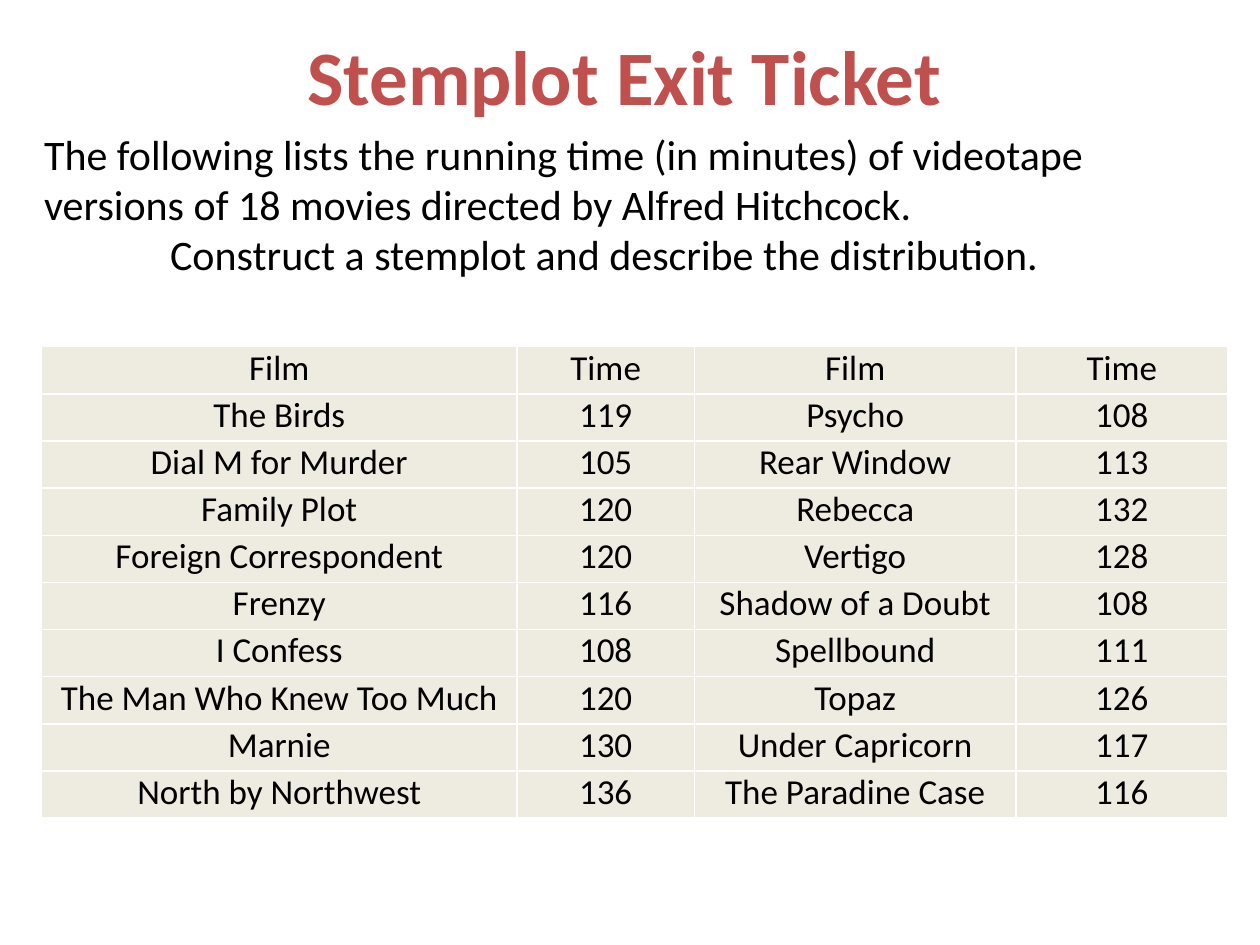
from lxml.etree import SubElement
from pptx import Presentation
from pptx.dml.color import RGBColor
from pptx.enum.text import MSO_ANCHOR, PP_ALIGN
from pptx.oxml.ns import qn
from pptx.util import Cm, Pt

RED = RGBColor(0xC0, 0x50, 0x4D)
BLACK = RGBColor(0, 0, 0)
WHITE = RGBColor(0xFF, 0xFF, 0xFF)
CREAM = RGBColor(0xEE, 0xEC, 0xE1)

TITLE_FONT = {"name": "Calibri", "size": Pt(44), "bold": True}
BODY_FONT = {"name": "Calibri", "size": Pt(24), "bold": False}
CELL_FONT = {"name": "Calibri", "size": Pt(20), "bold": False}
CELL_FORMAT = {"margin_left": Cm(0.18), "margin_right": Cm(0.18),
               "margin_top": 0, "margin_bottom": 0,
               "vertical_anchor": MSO_ANCHOR.TOP}

INTRO = ("The following lists the running time (in minutes) of videotape "
         "versions of 18 movies directed by Alfred Hitchcock.")
TASK = "Construct a stemplot and describe the distribution."

COLUMN_WIDTHS = [9.58, 3.58, 6.48, 4.27]
ROW_HEIGHT = 0.95
FILMS = [
    ("Film", "Time", "Film", "Time"),
    ("The Birds", "119", "Psycho", "108"),
    ("Dial M for Murder", "105", "Rear Window", "113"),
    ("Family Plot", "120", "Rebecca", "132"),
    ("Foreign Correspondent", "120", "Vertigo", "128"),
    ("Frenzy", "116", "Shadow of a Doubt", "108"),
    ("I Confess", "108", "Spellbound", "111"),
    ("The Man Who Knew Too Much", "120", "Topaz", "126"),
    ("Marnie", "130", "Under Capricorn", "117"),
    ("North by Northwest", "136", "The Paradine Case", "116"),
]


def set_attributes(target, values):
    for name, value in values.items():
        setattr(target, name, value)


def write_paragraph(p, text, font, color, align=PP_ALIGN.LEFT):
    p.alignment = align
    r = p.add_run()
    r.text = text
    set_attributes(r.font, font)
    r.font.color.rgb = color


def add_text_frame(s, left, top, width, height, anchor=MSO_ANCHOR.TOP):
    box = s.shapes.add_textbox(Cm(left), Cm(top), Cm(width), Cm(height))
    tf = box.text_frame
    set_attributes(tf, {"word_wrap": True, "vertical_anchor": anchor})
    return tf


def add_title(s):
    tf = add_text_frame(s, 0.43, 0.05, 24.33, 2.9, MSO_ANCHOR.MIDDLE)
    write_paragraph(tf.paragraphs[0], "Stemplot Exit Ticket", TITLE_FONT, RED,
                    PP_ALIGN.CENTER)


def add_instructions(s):
    tf = add_text_frame(s, 0.64, 2.46, 24.13, 3.33)
    write_paragraph(tf.paragraphs[0], INTRO, BODY_FONT, BLACK)
    p = tf.add_paragraph()
    write_paragraph(p, TASK, BODY_FONT, BLACK)
    p._p.get_or_add_pPr().set("indent", str(Cm(2.54)))


def add_borders(cell):
    tc_pr = cell._tc.get_or_add_tcPr()
    for side in ("a:lnL", "a:lnR", "a:lnT", "a:lnB"):
        line = SubElement(tc_pr, qn(side), w=str(Pt(1)))
        fill = SubElement(line, qn("a:solidFill"))
        SubElement(fill, qn("a:srgbClr"), val=str(WHITE))


def format_cell(cell, text):
    set_attributes(cell, CELL_FORMAT)
    write_paragraph(cell.text_frame.paragraphs[0], text, CELL_FONT, BLACK,
                    PP_ALIGN.CENTER)
    add_borders(cell)
    cell.fill.solid()
    cell.fill.fore_color.rgb = CREAM


def add_film_table(s):
    frame = s.shapes.add_table(len(FILMS), len(COLUMN_WIDTHS), Cm(0.84), Cm(6.99),
                               Cm(sum(COLUMN_WIDTHS)), Cm(ROW_HEIGHT * len(FILMS)))
    table = frame.table
    set_attributes(table, {"first_row": False, "horz_banding": False})
    for column, width in zip(table.columns, COLUMN_WIDTHS):
        column.width = Cm(width)
    for row, texts in zip(table.rows, FILMS):
        row.height = Cm(ROW_HEIGHT)
        for cell, text in zip(row.cells, texts):
            format_cell(cell, text)


def main():
    prs = Presentation()
    set_attributes(prs, {"slide_width": Cm(25.4), "slide_height": Cm(19.05)})
    s = prs.slides.add_slide(prs.slide_layouts[6])
    add_title(s)
    add_instructions(s)
    add_film_table(s)
    prs.save("out.pptx")


if __name__ == "__main__":
    main()
